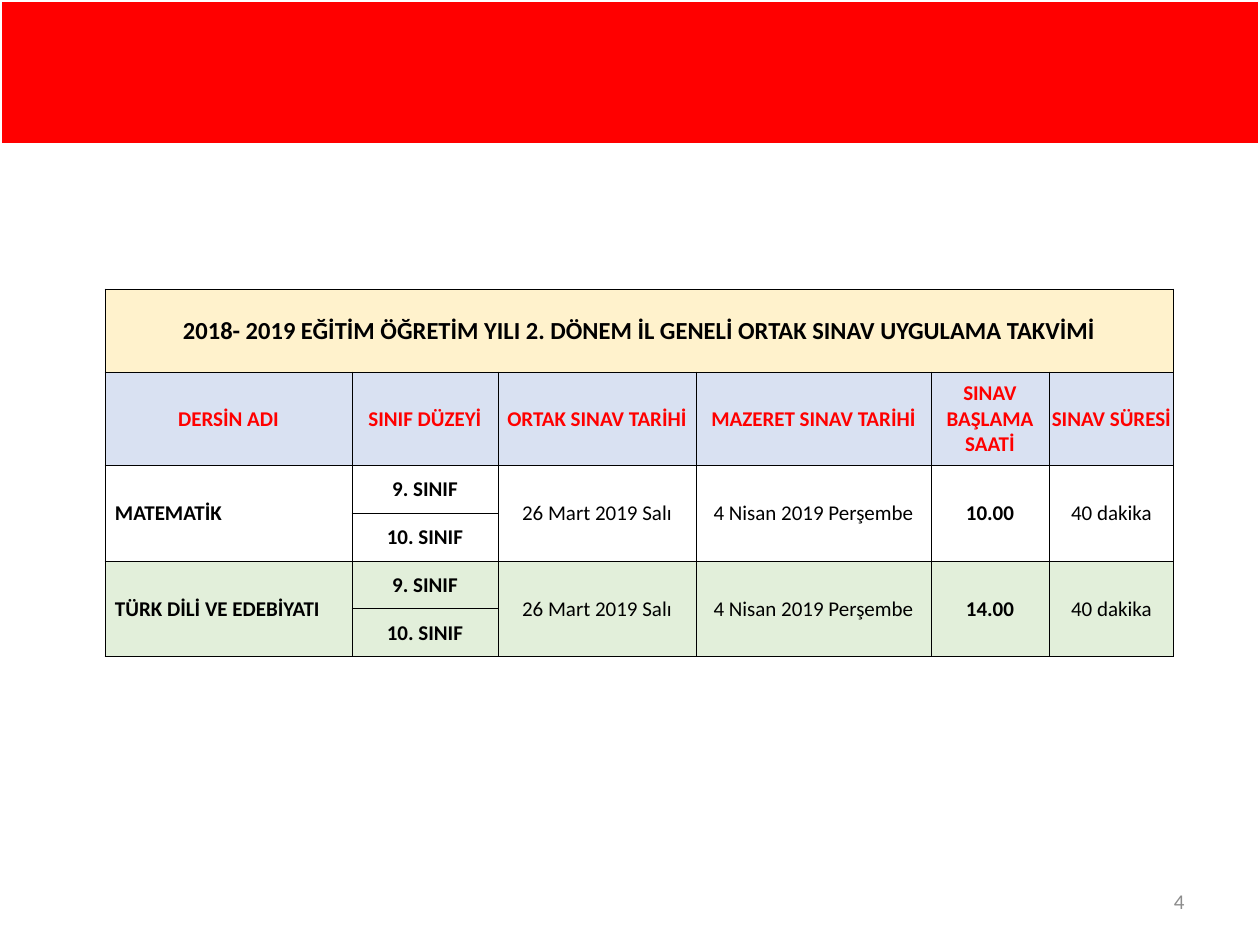
import pptx
import pptx.dml.color
import pptx.enum.shapes
import pptx.enum.text
import pptx.oxml
import pptx.oxml.ns
import pptx.util

PX = 914400 // 126
ALIGN = pptx.enum.text.PP_ALIGN
MIDDLE = pptx.enum.text.MSO_ANCHOR.MIDDLE

COLUMN_WIDTHS = [247, 146, 198, 235, 118, 125]
ROW_HEIGHTS = [83, 93, 48, 48, 48, 48]
TITLE = "2018- 2019 EĞİTİM ÖĞRETİM YILI 2. DÖNEM İL GENELİ ORTAK SINAV UYGULAMA TAKVİMİ"
HEADINGS = ["DERSİN ADI", "SINIF DÜZEYİ", "ORTAK SINAV TARİHİ",
            "MAZERET SINAV TARİHİ", "SINAV BAŞLAMA SAATİ", "SINAV SÜRESİ"]
GRADES = ["9. SINIF", "10. SINIF"]
EXAMS = [("MATEMATİK", "10.00", None), ("TÜRK DİLİ VE EDEBİYATI", "14.00", "E2EFDA")]
DATES = ["26 Mart 2019 Salı", "4 Nisan 2019 Perşembe"]
DURATION = "40 dakika"


def px(count):
    return pptx.util.Emu(count * PX)


def color(value):
    return pptx.dml.color.RGBColor.from_string(value)


def apply(target, values):
    for name, value in values.items():
        setattr(target, name, value)


class Page:
    """Draws elements in one style on the current slide."""
    font = "Calibri"
    border = "000000"

    def __init__(self, deck):
        self.slide = deck.slides.add_slide(deck.slide_layouts[6])

    def add_text(self, frame, text, ink="000000", size=12, bold=False, align=ALIGN.CENTER):
        para = frame.paragraphs[0]
        para.alignment = align
        span = para.add_run()
        span.text = text
        apply(span.font, {"name": self.font, "size": pptx.util.Pt(size), "bold": bold})
        span.font.color.rgb = color(ink)

    def band(self, left, top, width, height, fill, line):
        box = self.slide.shapes.add_shape(
            pptx.enum.shapes.MSO_SHAPE.RECTANGLE, px(left), px(top), px(width), px(height))
        box.shadow.inherit = False
        box.fill.solid()
        box.fill.fore_color.rgb = color(fill)
        box.line.color.rgb = color(line)
        box.line.width = pptx.util.Pt(2)

    def label(self, left, top, width, height, text, **style):
        box = self.slide.shapes.add_textbox(px(left), px(top), px(width), px(height))
        apply(box.text_frame, {"word_wrap": True, "vertical_anchor": MIDDLE})
        self.add_text(box.text_frame, text, **style)

    def table(self, left, top, widths, heights):
        frame = self.slide.shapes.add_table(
            len(heights), len(widths), px(left), px(top), px(sum(widths)), px(sum(heights)))
        table = frame.table
        apply(table, {"first_row": False, "horz_banding": False})
        for column, width in zip(table.columns, widths):
            column.width = px(width)
        for row, height in zip(table.rows, heights):
            row.height = px(height)
        for cell in table.iter_cells():
            self.outline(cell)
        return table

    def outline(self, cell):
        properties = cell._tc.get_or_add_tcPr()
        for side in ("lnL", "lnR", "lnT", "lnB"):
            properties.append(pptx.oxml.parse_xml(
                f'<a:{side} {pptx.oxml.ns.nsdecls("a")} w="6350"><a:solidFill>'
                f'<a:srgbClr val="{self.border}"/></a:solidFill></a:{side}>'))

    def cell(self, table, row, column, text, fill=None, rows=1, columns=1, indent=1, **style):
        """Fills one cell, merged over the given rows and columns."""
        cell = table.cell(row, column)
        if rows * columns > 1:
            cell.merge(table.cell(row + rows - 1, column + columns - 1))
        for line in range(row, row + rows):
            for place in range(column, column + columns):
                self.paint(table.cell(line, place), fill)
        apply(cell, {"margin_left": px(indent), "margin_right": px(1), "margin_top": px(1),
                     "margin_bottom": 0, "vertical_anchor": MIDDLE})
        self.add_text(cell.text_frame, text, **style)

    def paint(self, cell, fill):
        if fill is None:
            cell.fill.background()
        else:
            cell.fill.solid()
            cell.fill.fore_color.rgb = color(fill)


def add_schedule(page):
    table = page.table(105, 289, COLUMN_WIDTHS, ROW_HEIGHTS)
    page.cell(table, 0, 0, TITLE, "FFF2CC", columns=len(COLUMN_WIDTHS), size=14, bold=True)
    for column, heading in enumerate(HEADINGS):
        page.cell(table, 1, column, heading, "D9E1F2", ink="FF0000", bold=True)
    for index, (course, start, fill) in enumerate(EXAMS):
        row = 2 + index * len(GRADES)
        page.cell(table, row, 0, course, fill, rows=2, indent=10, bold=True, align=ALIGN.LEFT)
        for offset, grade in enumerate(GRADES):
            page.cell(table, row + offset, 1, grade, fill, bold=True)
        for column, text in enumerate([*DATES, start, DURATION], start=2):
            page.cell(table, row, column, text, fill, rows=2, bold=text == start)


def main():
    deck = pptx.Presentation()
    apply(deck, {"slide_width": px(1260), "slide_height": px(945)})
    page = Page(deck)
    page.band(0, 0, 1260, 145, "FF0000", "FFFFFF")
    add_schedule(page)
    page.label(903, 876, 294, 50, "4", ink="8C8C8C", align=ALIGN.RIGHT)
    deck.save("out.pptx")


if __name__ == "__main__":
    main()
